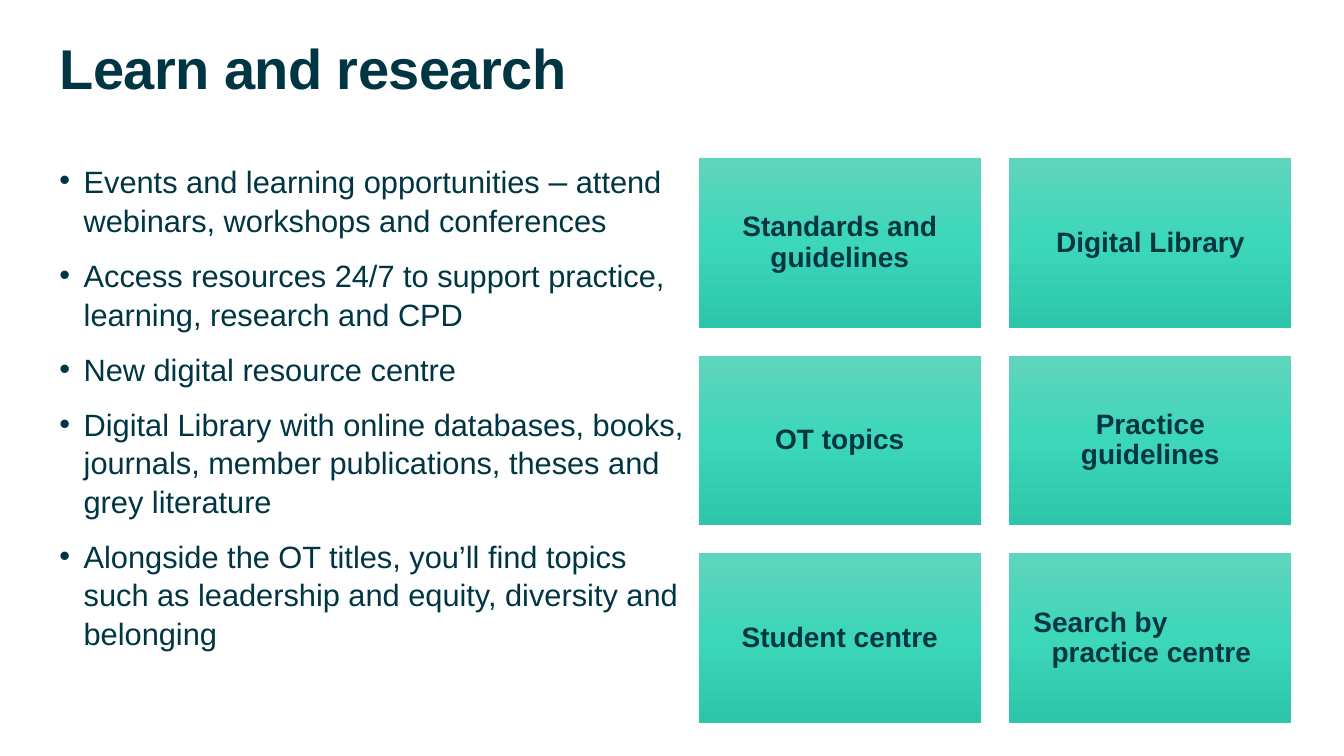
import copy

import pptx
import pptx.util
import pptx.dml.color
import pptx.enum.shapes
import pptx.enum.text
import pptx.oxml.xmlchemy
from pptx.oxml.ns import qn
from pptx.util import Inches, Pt

RGBColor = pptx.dml.color.RGBColor
PP_ALIGN = pptx.enum.text.PP_ALIGN
MSO_ANCHOR = pptx.enum.text.MSO_ANCHOR

NAVY = RGBColor(0x00, 0x36, 0x43)
MINT_LIGHT = RGBColor(0x60, 0xD5, 0xBD)
MINT = RGBColor(0x3C, 0xD6, 0xB9)
MINT_DARK = RGBColor(0x2D, 0xC6, 0xAA)

BULLETS = [
    [("Events and learning opportunities ", 22), ("–", 24),
     (" attend webinars, workshops and conferences", 22)],
    [("Access resources 24/7 to support practice, learning, research and CPD", 22)],
    [("New digital resource centre", 22)],
    [("Digital Library with online databases, books, journals, "
      "member publications, theses and grey literature", 22)],
    [("Alongside the OT titles, you’ll find topics such as leadership "
      "and equity, diversity and belonging", 22)],
]

# One row of tiles per tuple; each tile is a list of forced lines.
TILES = [
    (["Standards and guidelines"], ["Digital Library"]),
    (["OT topics"], ["Practice", "guidelines"]),
    (["Student centre"], ["Search by", "practice centre"]),
]
STAGGERED = "Search by"


class SlideBuilder:
    """Holds the text style and the slide being filled."""

    def __init__(self, prs, font="Arial", color=NAVY):
        self.font = font
        self.color = color
        self.s = prs.slides.add_slide(prs.slide_layouts[5])

    def frame(self, sp, inset, anchor):
        tf = sp.text_frame
        tf.word_wrap = True
        tf.auto_size = pptx.enum.text.MSO_AUTO_SIZE.NONE
        tf.vertical_anchor = anchor
        tf.margin_left = tf.margin_right = Inches(inset)
        tf.margin_top = tf.margin_bottom = Inches(inset)
        return tf

    def run(self, p, text, size, bold=False):
        r = p.add_run()
        r.text = text
        r.font.name = self.font
        r.font.size = Pt(size)
        r.font.bold = bold
        r.font.color.rgb = self.color
        return r

    def indent(self, p, left, first):
        pPr = p._p.get_or_add_pPr()
        pPr.set("marL", str(Inches(left)))
        pPr.set("indent", str(Inches(first)))
        return pPr

    def title(self, text, x, y, w, h):
        sp = self.s.shapes.title
        sp.left, sp.top, sp.width, sp.height = map(Inches, (x, y, w, h))
        p = self.frame(sp, 0, MSO_ANCHOR.TOP).paragraphs[0]
        p.alignment = PP_ALIGN.LEFT
        p.line_spacing = 0.9
        r = self.run(p, text, 40, bold=True)
        r._r.get_or_add_rPr().set("spc", "-40")

    def bullets(self, items, x, y, w, h):
        sp = self.s.shapes.add_textbox(*map(Inches, (x, y, w, h)))
        tf = self.frame(sp, 0, MSO_ANCHOR.TOP)
        for i, item in enumerate(items):
            p = tf.add_paragraph() if i else tf.paragraphs[0]
            pPr = self.indent(p, 0.24, -0.24)
            for tag, key, value in (("buFont", "typeface", self.font),
                                    ("buChar", "char", "•")):
                bu = pptx.oxml.xmlchemy.OxmlElement("a:" + tag)
                bu.set(key, value)
                pPr.append(bu)
            p.line_spacing = 1.04
            p.space_after = Pt(12)
            for text, size in item:
                self.run(p, text, size)

    def gradient(self, sp, colors):
        """Fill top to bottom with evenly spaced colours."""
        sp.fill.gradient()
        sp.fill.gradient_angle = 270
        stops = sp._element.spPr.find(qn("a:gradFill")).find(qn("a:gsLst"))
        while len(stops) < len(colors):
            stops.append(copy.deepcopy(stops[0]))
        for i, stop in enumerate(sp.fill.gradient_stops):
            stop.color.rgb = colors[i]
            stop.position = i / (len(colors) - 1)

    def tile(self, lines, x, y, w, h):
        sp = self.s.shapes.add_shape(pptx.enum.shapes.MSO_SHAPE.RECTANGLE,
                                     *map(Inches, (x, y, w, h)))
        sp.shadow.inherit = False
        sp.line.fill.background()
        self.gradient(sp, (MINT_LIGHT, MINT, MINT_DARK))
        p = self.frame(sp, 0.08, MSO_ANCHOR.MIDDLE).paragraphs[0]
        p.line_spacing = 0.9
        if lines[0] == STAGGERED:
            p.alignment = PP_ALIGN.LEFT
            self.indent(p, 0.34, -0.18)
        else:
            p.alignment = PP_ALIGN.CENTER
        for i, line in enumerate(lines):
            if i:
                p.add_line_break()
            self.run(p, line, 20, bold=True)


def main():
    prs = pptx.Presentation()
    prs.slide_width, prs.slide_height = Inches(13.33), Inches(7.5)
    b = SlideBuilder(prs)
    b.title("Learn and research", 0.59, 0.41, 12.18, 0.79)
    b.bullets(BULLETS, 0.59, 1.57, 6.34, 4.72)
    w, h, gap = 2.8, 1.68, 0.28
    for row, tiles in enumerate(TILES):
        for col, lines in enumerate(tiles):
            b.tile(lines, 6.93 + col * (w + gap), 1.57 + row * (h + gap), w, h)
    prs.save("out.pptx")


if __name__ == "__main__":
    main()
